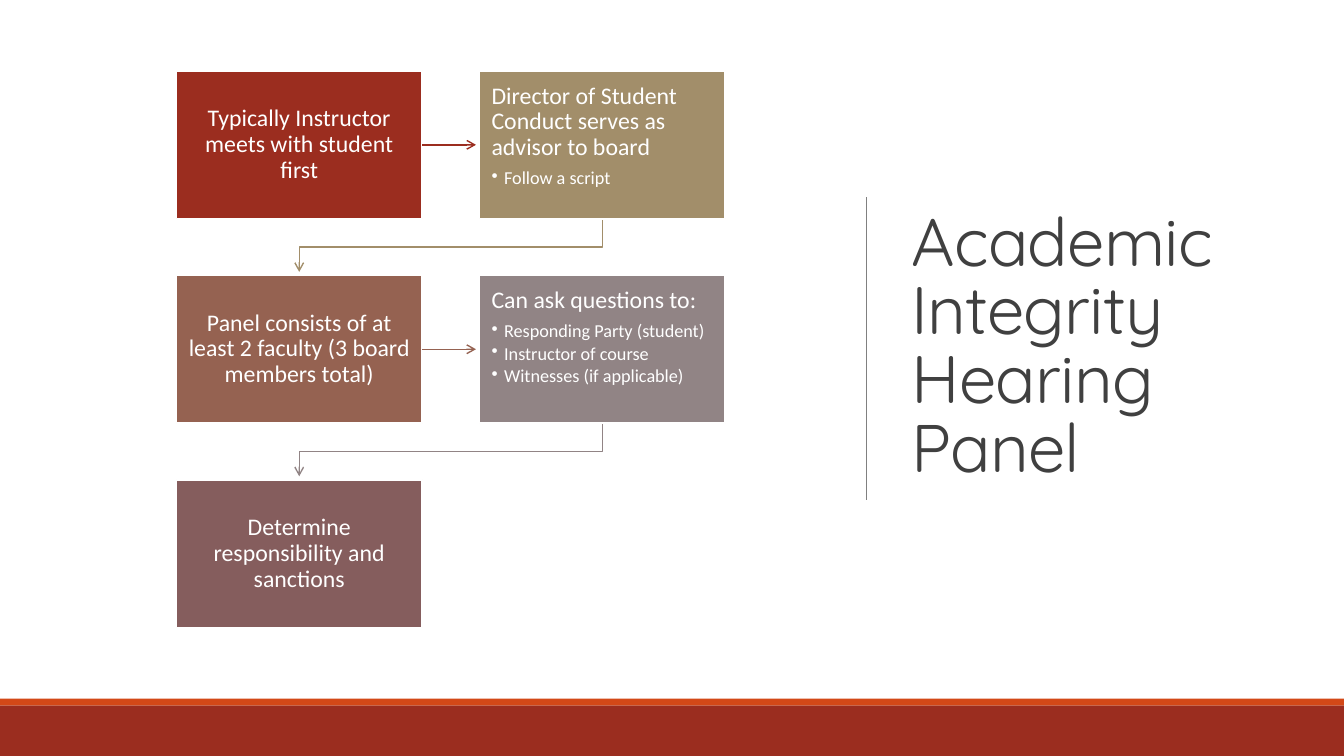
from lxml.etree import SubElement
from pptx import Presentation
from pptx.dml.color import RGBColor
from pptx.enum.shapes import MSO_CONNECTOR, MSO_SHAPE
from pptx.enum.text import MSO_ANCHOR, PP_ALIGN
from pptx.oxml.ns import qn
from pptx.util import Pt

# Content
TITLE = "Academic Integrity Hearing Panel"
STEPS = [  # heading, bullets, colour
    ("Typically Instructor meets with student first", [], "red"),
    ("Director of Student Conduct serves as advisor to board", ["Follow a script"], "sand"),
    ("Panel consists of at least 2 faculty (3 board members total)", [], "brown"),
    ("Can ask questions to:",
     ["Responding Party (student)", "Instructor of course", "Witnesses (if applicable)"], "grey"),
    ("Determine responsibility and sanctions", [], "plum"),
]
COLORS = {
    "red": "9B2D1F", "sand": "A28E6A", "brown": "956251", "grey": "918485",
    "plum": "855D5D", "orange": "D34817", "white": "FFFFFF", "ink": "404040", "rule": "808080",
}

# Layout in points
SLIDE_W, SLIDE_H = 960, 540
LEFT, TOP = 126, 50.7
BOX_W, BOX_H = 175.5, 105.5
PITCH_X, PITCH_Y = 216.5, 146
COLUMNS = 2
ARROW_GAP = 2.5  # space between an arrow tip and the next box
RULE_X, RULE_TOP, RULE_BOTTOM = 618.7, 141, 357
BANDS = [(499, 5, "orange"), (504, 36, "red")]  # top, height, colour

prs = Presentation()
prs.slide_width, prs.slide_height = Pt(SLIDE_W), Pt(SLIDE_H)
slide = prs.slides.add_slide(prs.slide_layouts[6])
shapes = slide.shapes


def rgb(name):
    return RGBColor.from_string(COLORS[name])


def add_rect(x, y, w, h, color):
    rect = shapes.add_shape(MSO_SHAPE.RECTANGLE, Pt(x), Pt(y), Pt(w), Pt(h))
    rect.shadow.inherit = False
    rect.fill.solid()
    rect.fill.fore_color.rgb = rgb(color)
    rect.line.fill.background()
    return rect


def add_straight(x1, y1, x2, y2, color, width):
    line = shapes.add_connector(MSO_CONNECTOR.STRAIGHT, Pt(x1), Pt(y1), Pt(x2), Pt(y2))
    line.line.color.rgb = rgb(color)
    line.line.width = Pt(width)
    SubElement(line._element.spPr, qn("a:effectLst"))
    return line


def add_arrowhead(line):
    SubElement(line.line._get_or_add_ln(), qn("a:tailEnd"), type="arrow")


def style(paragraph, size, after):
    paragraph.font.name = "Calibri"
    paragraph.font.size = Pt(size)
    paragraph.font.color.rgb = rgb("white")
    paragraph.line_spacing = 0.9
    paragraph.space_after = Pt(after)


def add_step(x, y, heading, bullets, color):
    step = add_rect(x, y, BOX_W, BOX_H, color)
    step.line.color.rgb = rgb("white")
    step.line.width = Pt(1.25)
    frame = step.text_frame
    frame.word_wrap = True
    frame.margin_left = frame.margin_right = Pt(8.6)
    frame.margin_top = frame.margin_bottom = Pt(9)
    frame.vertical_anchor = MSO_ANCHOR.TOP if bullets else MSO_ANCHOR.MIDDLE
    first = frame.paragraphs[0]
    first.text = heading
    first.alignment = PP_ALIGN.LEFT if bullets else PP_ALIGN.CENTER
    style(first, 17, 6)
    for bullet in bullets:
        item = frame.add_paragraph()
        item.text = bullet
        item.level = 1
        item.alignment = PP_ALIGN.LEFT
        style(item, 13, 2)
        props = item._p.get_or_add_pPr()
        props.set("marL", str(Pt(9)))
        props.set("indent", str(Pt(-9)))
        SubElement(props, qn("a:buChar"), char="•")
        # the bullet mark must precede the default run properties
        props.append(props.find(qn("a:defRPr")))
    return step


# Bands at the foot
for top, height, color in BANDS:
    add_rect(0, top, SLIDE_W, height, color)

# Title and the rule beside it
add_straight(RULE_X, RULE_TOP, RULE_X, RULE_BOTTOM, "rule", 0.5)
title = shapes.add_textbox(Pt(644), Pt(50), Pt(266), Pt(398)).text_frame
title.word_wrap = True
title.vertical_anchor = MSO_ANCHOR.MIDDLE
line = title.paragraphs[0]
line.text = TITLE
line.line_spacing = 0.85
line.font.name = "Quicksand"
line.font.size = Pt(48)
line.font.color.rgb = rgb("ink")
line.runs[0].font._element.set("spc", "-50")

# Steps, each with an arrow to the next
for i, (heading, bullets, color) in enumerate(STEPS):
    row, column = divmod(i, COLUMNS)
    x, y = LEFT + column * PITCH_X, TOP + row * PITCH_Y
    step = add_step(x, y, heading, bullets, color)
    if i == len(STEPS) - 1:
        continue
    if column < COLUMNS - 1:
        middle = y + BOX_H / 2
        arrow = add_straight(x + BOX_W, middle, x + PITCH_X - ARROW_GAP, middle, color, 1)
        arrow.begin_connect(step, 3)
    else:
        start_x, end_x = x + BOX_W / 2, LEFT + BOX_W / 2
        bottom, next_top = y + BOX_H, y + PITCH_Y
        turn = (bottom + next_top) / 2
        builder = shapes.build_freeform(Pt(start_x), Pt(bottom + 1))
        builder.add_line_segments(
            [(Pt(start_x), Pt(turn)), (Pt(end_x), Pt(turn)),
             (Pt(end_x), Pt(next_top - ARROW_GAP))], close=False)
        arrow = builder.convert_to_shape()
        arrow.shadow.inherit = False
        arrow.fill.background()
        arrow.line.color.rgb = rgb(color)
        arrow.line.width = Pt(1)
    add_arrowhead(arrow)

prs.save("out.pptx")
